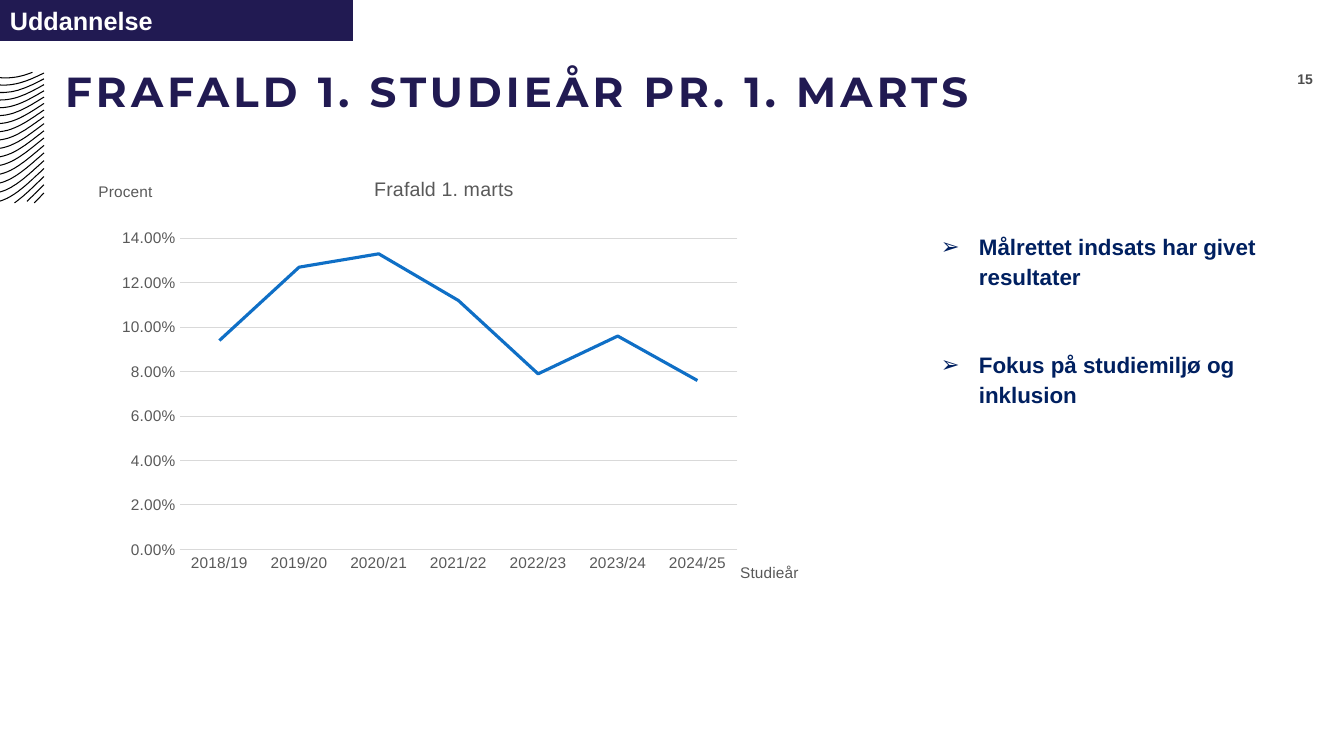
from lxml import etree
from pptx import Presentation
from pptx.chart.data import CategoryChartData
from pptx.dml.color import RGBColor
from pptx.enum.chart import XL_CHART_TYPE, XL_MARKER_STYLE, XL_TICK_MARK
from pptx.enum.shapes import MSO_SHAPE
from pptx.enum.text import MSO_ANCHOR, PP_ALIGN
from pptx.oxml import parse_xml
from pptx.oxml.ns import nsdecls, qn
from pptx.util import Pt

PX = 914400 / 100.8
LINE, NO_MARKER, NO_TICK = XL_CHART_TYPE.LINE, XL_MARKER_STYLE.NONE, XL_TICK_MARK.NONE
MIDDLE, LEFT, RIGHT = MSO_ANCHOR.MIDDLE, PP_ALIGN.LEFT, PP_ALIGN.RIGHT
COLORS = {name: RGBColor.from_string(value) for name, value in {
    "navy": "211A52", "bullet": "002060", "white": "FFFFFF", "black": "000000",
    "number": "4D4D4D", "label": "595959", "grid": "D9D9D9", "line": "0F6FC6",
}.items()}


def px(*lengths):
    return [round(n * PX) for n in lengths]


def style(font, size, color, bold=False, name="Arial"):
    font.name, font.size, font.bold = name, Pt(size), bold
    font.color.rgb = COLORS[color]


prs = Presentation()
prs.slide_width, prs.slide_height = px(1344, 756)
s = prs.slides.add_slide(prs.slide_layouts[5])

# Wave pattern: curves that steepen downwards, cut off at top and bottom
STEPS, TOP, BOTTOM, WIDTH = 24, 72, 203, 44
for i in range(-1, 18):
    left_y = 85 + 7.4 * i + 0.064 * i ** 2
    right_y = 73 + 5.7 * i + 0.08 * i ** 2
    controls = [(0, left_y), (15, left_y + 1 - 0.4 * i),
                (28, right_y + 8 + 0.5 * i), (WIDTH, right_y)]
    points = []
    for k in range(STEPS + 1):
        t = k / STEPS
        weights = [(1 - t) ** 3, 3 * t * (1 - t) ** 2, 3 * t ** 2 * (1 - t), t ** 3]
        x, y = (sum(w * c[axis] for w, c in zip(weights, controls)) for axis in (0, 1))
        if TOP <= y <= BOTTOM:
            points.append((round(x * 10), round(y * 10)))
    builder = s.shapes.build_freeform(*points[0], scale=PX / 10)
    builder.add_line_segments(points[1:], close=False)
    wave = builder.convert_to_shape()
    wave.shadow.inherit = False
    wave.fill.background()
    wave.line.color.rgb = COLORS["black"]
    wave.line.width = Pt(0.75)

# Title
title = s.shapes.title
title.left, title.top, title.width, title.height = px(65, 45, 1270, 113)
tf = title.text_frame
tf.margin_left = tf.margin_top = tf.margin_right = 0
tf.margin_bottom = px(21)[0]
tf.vertical_anchor = MIDDLE
p = tf.paragraphs[0]
p.alignment = LEFT
r = p.add_run()
r.text = "FRAFALD 1. STUDIEÅR PR. 1. MARTS"
style(r.font, 30, "navy", True, "Montserrat")
r.font._element.set("spc", "300")

# Section tag
tag = s.shapes.add_shape(MSO_SHAPE.RECTANGLE, *px(0, 0, 353, 41))
tag.shadow.inherit = False
tag.fill.solid()
tag.fill.fore_color.rgb = COLORS["navy"]
tag.line.fill.background()
tag.text_frame.vertical_anchor = MIDDLE
p = tag.text_frame.paragraphs[0]
p.alignment = LEFT
r = p.add_run()
r.text = "Uddannelse"
style(r.font, 18, "white", True)

# Page number
tf = s.shapes.add_textbox(*px(1250, 66, 63, 25)).text_frame
tf.margin_left = tf.margin_top = tf.margin_right = tf.margin_bottom = 0
tf.vertical_anchor = MIDDLE
p = tf.paragraphs[0]
p.alignment = RIGHT
r = p.add_run()
r.text = "15"
style(r.font, 10, "number", True)

# Dropout chart
data = CategoryChartData(number_format="0.00%")
data.categories = [f"{year}/{year - 1999}" for year in range(2018, 2025)]
data.add_series("Frafald 1. marts", [0.094, 0.127, 0.133, 0.112, 0.079, 0.096, 0.076])
chart = s.shapes.add_chart(LINE, *px(65, 153, 764, 502), data).chart
style(chart.font, 11, "label")
chart.has_legend = False

plot = chart.plots[0]
plot.vary_by_categories = False
series = plot.series[0]
series.smooth = False
series.marker.style = NO_MARKER
series.format.line.color.rgb = COLORS["line"]
series.format.line.width = Pt(2.25)

cat_axis, val_axis = chart.category_axis, chart.value_axis
for axis in (cat_axis, val_axis):
    axis.major_tick_mark = axis.minor_tick_mark = NO_TICK
    style(axis.tick_labels.font, 11, "label")
val_axis.minimum_scale, val_axis.maximum_scale, val_axis.major_unit = 0, 0.14, 0.02
val_axis.tick_labels.number_format = "0.00%"
val_axis.tick_labels.number_format_is_linked = False
val_axis.format.line.fill.background()
for line in (cat_axis.format.line, val_axis.major_gridlines.format.line):
    line.color.rgb = COLORS["grid"]
    line.width = Pt(0.75)

layouts = []
for owner, text, size, x, y in [
    (chart, "Frafald 1. marts", 14, 0.4, 0.04),
    (val_axis, "Procent", 11, 0.04, 0.05),
    (cat_axis, "Studieår", 11, 0.88, 0.81),
]:
    heading = owner.chart_title if owner is chart else owner.axis_title
    r = heading.text_frame.paragraphs[0].add_run()
    r.text = text
    style(r.font, size, "label")
    heading.text_frame._txBody.find(qn("a:bodyPr")).set("rot", "0")
    layouts.append((heading._element, {"x": x, "y": y}))
plot_area = chart._chartSpace.chart.plotArea
layouts.append((plot_area, {"x": 0.15, "y": 0.17, "w": 0.73, "h": 0.62}))

for element, place in layouts:
    old = element.find(qn("c:layout"))
    if old is not None:
        element.remove(old)
    layout = parse_xml(f"<c:layout {nsdecls('c')}><c:manualLayout/></c:layout>")
    manual = layout[0]
    if element is plot_area:
        etree.SubElement(manual, qn("c:layoutTarget")).set("val", "inner")
    for key in ("x", "y"):
        etree.SubElement(manual, qn(f"c:{key}Mode")).set("val", "edge")
    for key, value in place.items():
        etree.SubElement(manual, qn(f"c:{key}")).set("val", str(value))
    tx = element.find(qn("c:tx"))
    element.insert(0 if tx is None else 1, layout)

# Bullets
tf = s.shapes.add_textbox(*px(931, 226, 339, 190)).text_frame
tf.word_wrap = True
indent = px(38)[0]
for i, text in enumerate(["Målrettet indsats har givet resultater",
                          "Fokus på studiemiljø og inklusion"]):
    p = tf.add_paragraph() if i else tf.paragraphs[0]
    p.line_spacing = 1.1
    if i:
        p.space_before = Pt(42)
    pPr = p._p.get_or_add_pPr()
    pPr.set("marL", str(indent))
    pPr.set("indent", str(-indent))
    etree.SubElement(pPr, qn("a:buFont")).set("typeface", "Arial")
    etree.SubElement(pPr, qn("a:buChar")).set("char", "➢")
    r = p.add_run()
    r.text = text
    style(r.font, 16, "bullet", True)

prs.save("out.pptx")
